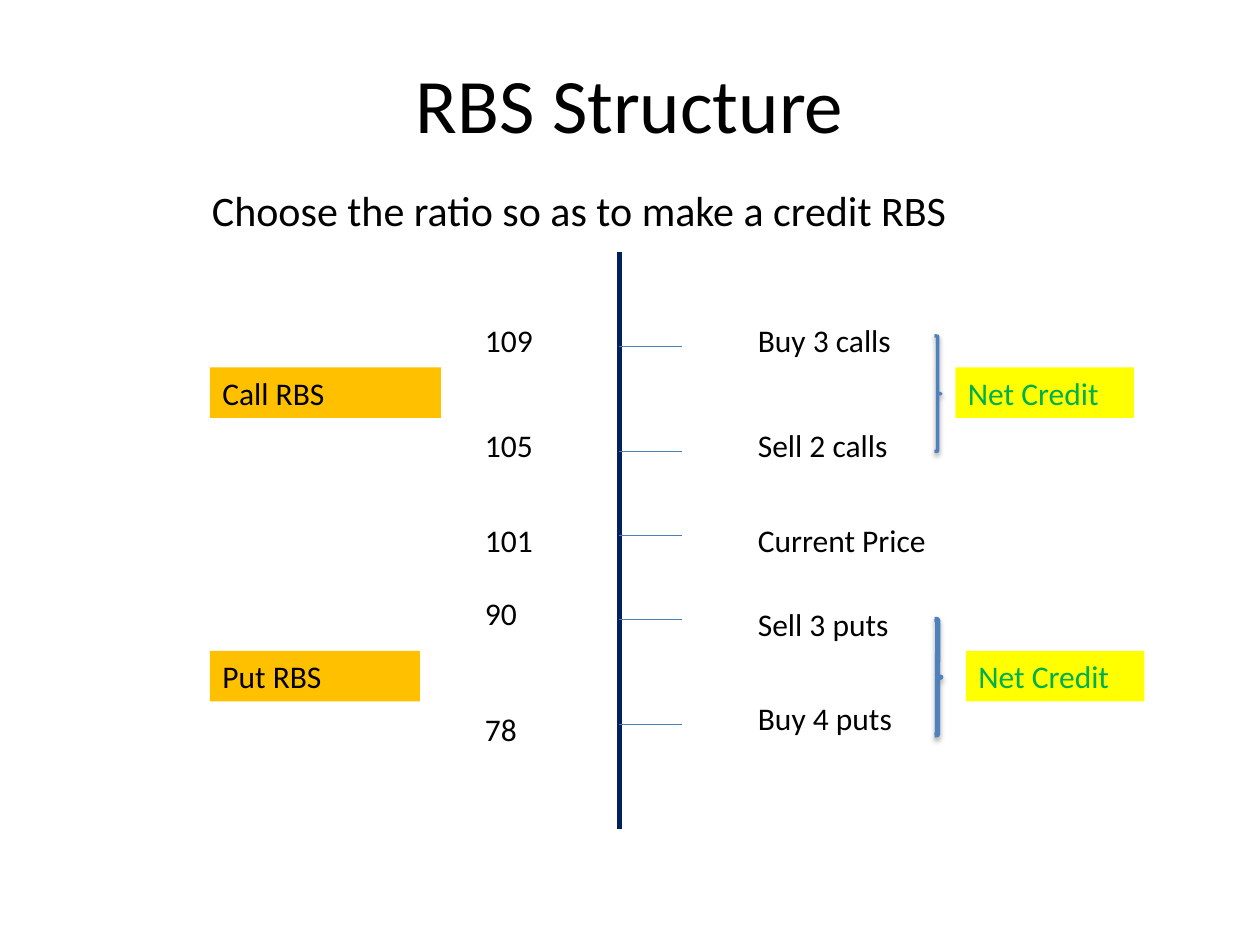
from dataclasses import dataclass

from lxml import etree
from pptx import Presentation
from pptx import util as u
from pptx.dml.color import RGBColor
from pptx.enum import shapes, text
from pptx.oxml.ns import qn


@dataclass(frozen=True)
class Theme:
    font: str = "Calibri"
    title: int = 44
    lead: int = 24
    body: int = 18
    ink: str = "000000"
    axis: str = "002060"
    tick: str = "4B7EBC"
    brace: str = "4F81BD"
    spread: str = "FFC000"
    credit: str = "FFFF00"
    credit_ink: str = "00B050"


T = Theme()
WIDTH, HEIGHT = 10, 7.5
COLS, ROWS = 120, 90
LABEL_H = 4.8  # rows taken by one line of body text


def x(cols):
    return u.Inches(WIDTH * cols / COLS)


def y(rows):
    return u.Inches(HEIGHT * rows / ROWS)


def rgb(value):
    return RGBColor.from_string(value)


def label(s, box, words, size=T.body, ink=T.ink, fill=None, centred=False):
    """One line of text in a box of (column, row, columns, rows)."""
    left, top, w, h = box
    sp = s.shapes.add_textbox(x(left), y(top), x(w), y(h))
    if fill:
        sp.fill.solid()
        sp.fill.fore_color.rgb = rgb(fill)
    tf = sp.text_frame
    tf.word_wrap = True
    p = tf.paragraphs[0]
    p.text = words
    p.font.name, p.font.size = T.font, u.Pt(size)
    p.font.color.rgb = rgb(ink)
    if centred:
        tf.vertical_anchor = text.MSO_ANCHOR.MIDDLE
        p.alignment = text.PP_ALIGN.CENTER


def line(s, start, end, colour, width):
    c = s.shapes.add_connector(shapes.MSO_CONNECTOR.STRAIGHT,
                               x(start[0]), y(start[1]), x(end[0]), y(end[1]))
    c.line.color.rgb, c.line.width = rgb(colour), u.Pt(width)
    etree.SubElement(c._element.spPr, qn("a:effectLst"))


def brace(s, box, width, alpha, dist):
    """Right brace with a soft shadow straight below it."""
    left, top, w, h = box
    sp = s.shapes.add_shape(shapes.MSO_SHAPE.RIGHT_BRACE,
                            x(left), y(top), x(w), y(h))
    sp.fill.background()
    sp.line.color.rgb, sp.line.width = rgb(T.brace), u.Pt(width)
    effects = etree.SubElement(sp._element.spPr, qn("a:effectLst"))
    shadow = etree.SubElement(effects, qn("a:outerShdw"), blurRad=str(u.Pt(3.1)),
                              dist=str(u.Pt(dist)), dir="5400000", rotWithShape="0")
    colour = etree.SubElement(shadow, qn("a:srgbClr"), val="000000")
    etree.SubElement(colour, qn("a:alpha"), val=str(alpha * 1000))


def heading(s, box):
    left, top, w, h = box
    label(s, (left, top, w, 12.4), "RBS Structure", T.title, centred=True)
    label(s, (left + 13, top + h - 6, 85, 6),
          "Choose the ratio so as to make a credit RBS", T.lead)


def price_axis(s, box, levels):
    """Vertical axis in the middle of the box, prices left, trades right."""
    left, top, w, h = box
    axis = left + 14
    line(s, (axis, top), (axis, top + h), T.axis, 3)
    for price, price_row, tick_row, trade, trade_row, trade_w in levels:
        line(s, (axis, top + tick_row), (axis + 6, top + tick_row), T.tick, 0.75)
        label(s, (left, top + price_row, 10, LABEL_H), price)
        label(s, (left + w - 19, top + trade_row, trade_w, LABEL_H), trade)


def spread(s, box, name, name_w, credit_gap, brace_style):
    """Spread name at the left; brace and its net credit at the right."""
    left, top, w, h = box
    label(s, (left, top + 3, name_w, LABEL_H), name, fill=T.spread)
    brace(s, (left + w, top, 0.6, h), *brace_style)
    label(s, (left + w + credit_gap, top + 3, 17, LABEL_H), "Net Credit",
          ink=T.credit_ink, fill=T.credit)


def main():
    prs = Presentation()
    prs.slide_width, prs.slide_height = u.Inches(WIDTH), u.Inches(HEIGHT)
    s = prs.slides.add_slide(prs.slide_layouts[6])

    heading(s, (6, 3.6, 108, 19.4))

    # price, its row, tick row, trade, its row, trade width
    price_axis(s, (45, 24, 45, 55), [
        ("109", 6, 9, "Buy 3 calls", 6, 17),
        ("105", 16, 19, "Sell 2 calls", 16, 16),
        ("101", 25, 27, "Current Price", 25, 19),
        ("90", 32, 35, "Sell 3 puts", 33, 16),
        ("78", 43, 45, "Buy 4 puts", 42, 16),
    ])

    # brace style: line width, shadow opacity, shadow distance
    spread(s, (20, 32, 69, 11), "Call RBS", 22, 2, (2, 38, 1.6))
    spread(s, (20, 59, 69, 11), "Put RBS", 20, 3, (3, 35, 1.8))

    prs.save("out.pptx")


if __name__ == "__main__":
    main()
